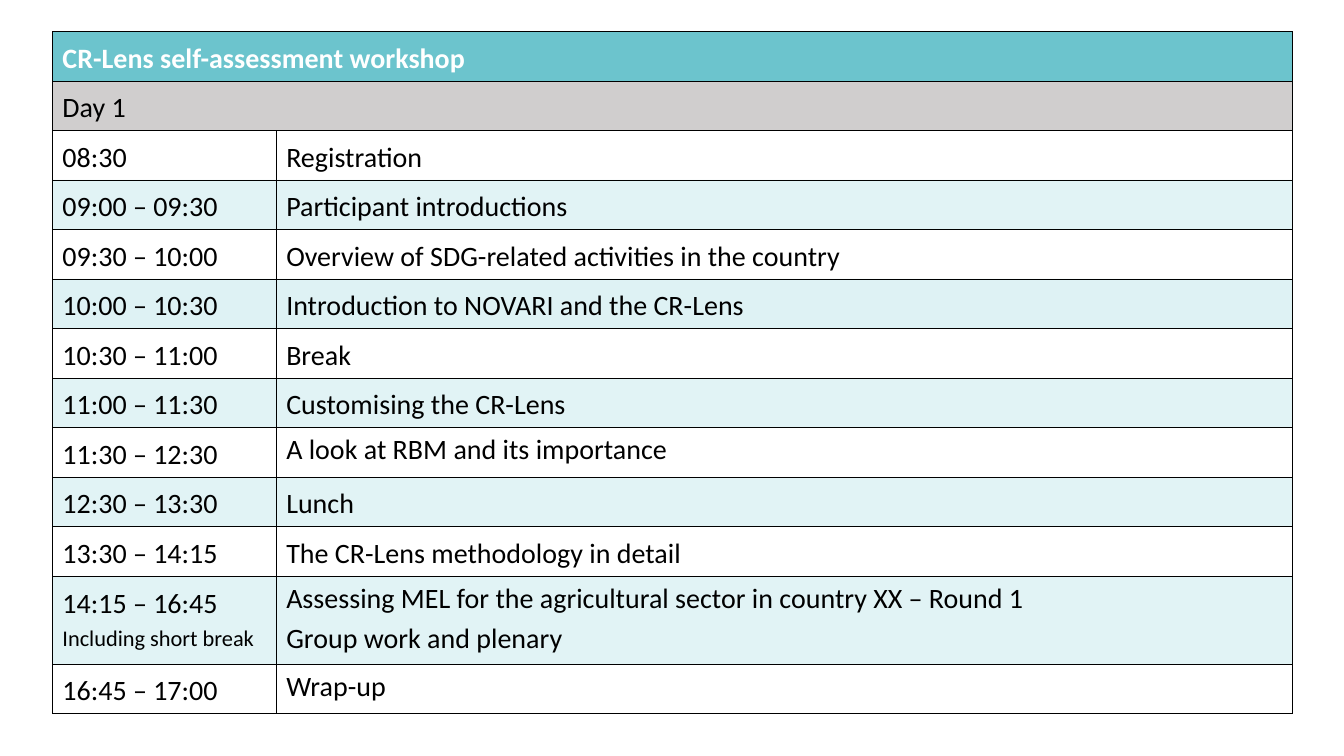
from lxml import etree
from pptx import Presentation
from pptx.dml.color import RGBColor
from pptx.oxml.ns import qn
from pptx.util import Cm, Pt

TEAL = RGBColor(0x6C, 0xC4, 0xCD)
GREY = RGBColor(0xD0, 0xCE, 0xCE)
WHITE = RGBColor(0xFF, 0xFF, 0xFF)
BLACK = RGBColor(0x00, 0x00, 0x00)

TITLE = "CR-Lens self-assessment workshop"
DAY = "Day 1"
BREAK_NOTE = "Including short break"
AGENDA = [
    ("08:30", "Registration"),
    ("09:00 – 09:30", "Participant introductions"),
    ("09:30 – 10:00", "Overview of SDG-related activities in the country"),
    ("10:00 – 10:30", "Introduction to NOVARI and the CR-Lens"),
    ("10:30 – 11:00", "Break"),
    ("11:00 – 11:30", "Customising the CR-Lens"),
    ("11:30 – 12:30", "A look at RBM and its importance"),
    ("12:30 – 13:30", "Lunch"),
    ("13:30 – 14:15", "The CR-Lens methodology in detail"),
    ("14:15 – 16:45\n" + BREAK_NOTE,
     "Assessing MEL for the agricultural sector in country XX – Round 1\n"
     "Group work and plenary"),
    ("16:45 – 17:00", "Wrap-up"),
]
TIGHT = ("A look at RBM", "Assessing MEL", "Wrap-up")


def style_cell(cell, color, opacity=100):
    tcPr = cell._tc.get_or_add_tcPr()
    for side in ("a:lnL", "a:lnR", "a:lnT", "a:lnB"):
        ln = etree.SubElement(tcPr, qn(side), w=str(Pt(0.25)))
        line_fill = etree.SubElement(ln, qn("a:solidFill"))
        etree.SubElement(line_fill, qn("a:srgbClr"), val=str(BLACK))
    cell.fill.solid()
    cell.fill.fore_color.rgb = color
    if opacity < 100:
        clr = tcPr.find(qn("a:solidFill")).find(qn("a:srgbClr"))
        etree.SubElement(clr, qn("a:alpha"), val=str(opacity * 1000))


def write_cell(cell, text, color=BLACK, bold=False):
    tf = cell.text_frame
    tf.text = text
    for p in tf.paragraphs:
        p.font.name = "Calibri"
        p.font.size = Pt(16 if p.text == BREAK_NOTE else 20)
        p.font.bold = bold
        p.font.color.rgb = color
        p.line_spacing = 1.15
        if p.text.startswith(TIGHT):
            p.line_spacing = 1.02
            p.space_after = Pt(0.6)


prs = Presentation()
prs.slide_width = Cm(33.87)
prs.slide_height = Cm(19.05)
s = prs.slides.add_slide(prs.slide_layouts[6])

n_rows = len(AGENDA) + 2
frame = s.shapes.add_table(n_rows, 2, Cm(1.32), Cm(0.79), Cm(31.24), Cm(16.28))
table = frame.table
table.first_row = False
table.horz_banding = False
table.columns[0].width = Cm(5.64)
table.columns[1].width = Cm(25.6)
for row in table.rows:
    row.height = Cm(1.17)
table.rows[n_rows - 2].height = Cm(2.21)

for i, (text, fill, color, bold) in enumerate([
    (TITLE, TEAL, WHITE, True),
    (DAY, GREY, BLACK, False),
]):
    for cell in table.rows[i].cells:
        style_cell(cell, fill)
    table.cell(i, 0).merge(table.cell(i, 1))
    write_cell(table.cell(i, 0), text, color, bold)

for i, entry in enumerate(AGENDA):
    for cell, text in zip(table.rows[i + 2].cells, entry):
        if i % 2:
            style_cell(cell, TEAL, 22 if i == 3 else 20)
        else:
            style_cell(cell, WHITE)
        write_cell(cell, text)

prs.save("out.pptx")
